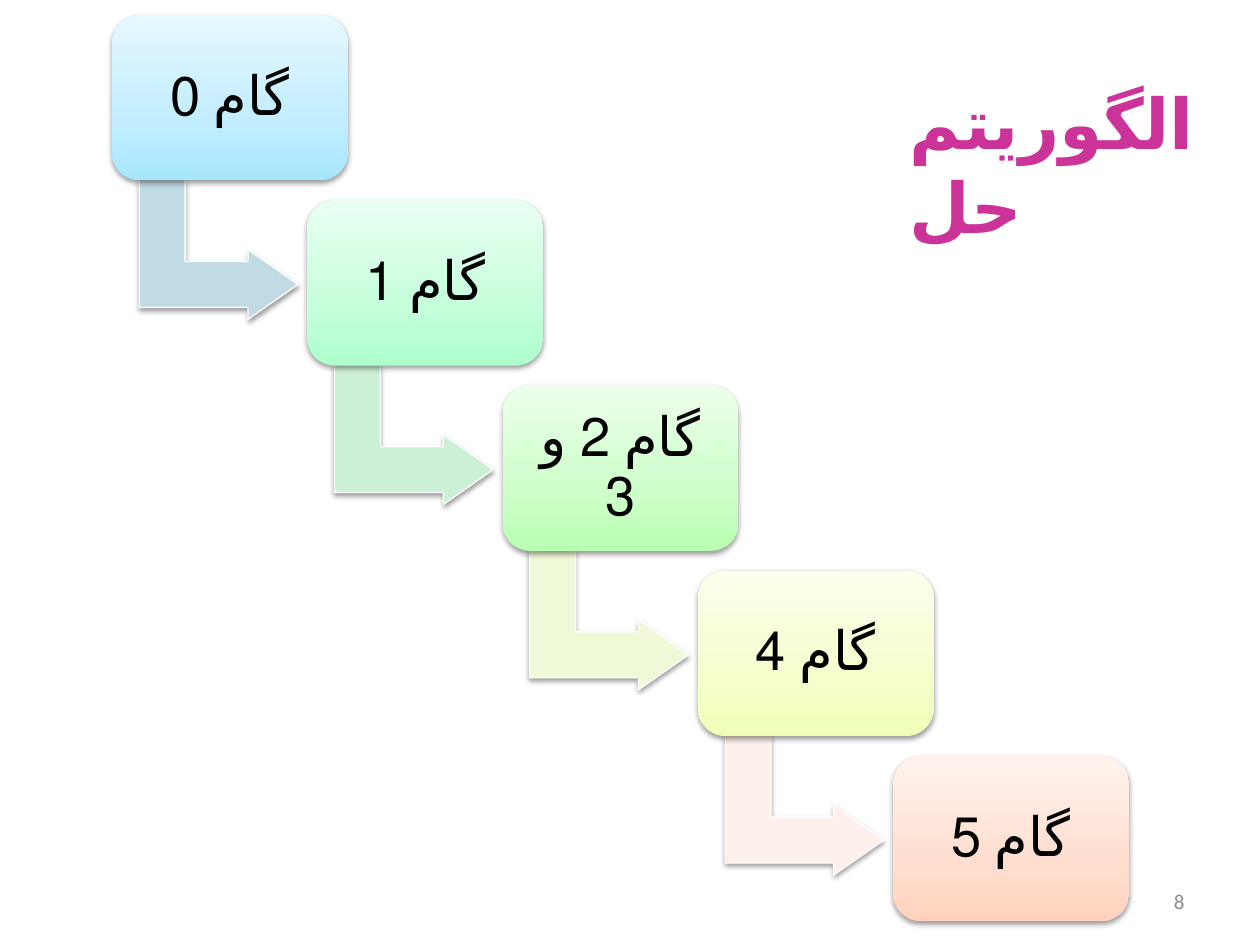
from copy import deepcopy

from lxml.etree import SubElement
from pptx import Presentation
from pptx.dml.color import RGBColor as Rgb
from pptx.enum.lang import MSO_LANGUAGE_ID as Language
from pptx.enum.shapes import MSO_SHAPE as Preset
from pptx.enum.text import MSO_ANCHOR as Anchor, PP_ALIGN as Align
from pptx.oxml.ns import qn
from pptx.util import Inches, Pt

BLACK = Rgb(0x00, 0x00, 0x00)
WHITE = Rgb(0xFF, 0xFF, 0xFF)
GREY = Rgb(0x8C, 0x8C, 0x8C)
MAGENTA = Rgb(0xCC, 0x33, 0x99)

# Box gradients, from the bottom edge up
BLUE = (Rgb(0xA7, 0xE6, 0xFF), Rgb(0xC1, 0xED, 0xFF), Rgb(0xE7, 0xF8, 0xFF))
MINT = (Rgb(0xAD, 0xFF, 0xCD), Rgb(0xC5, 0xFF, 0xDB), Rgb(0xE9, 0xFF, 0xF1))
GREEN = (Rgb(0xB9, 0xFF, 0xB2), Rgb(0xCD, 0xFF, 0xC9), Rgb(0xEC, 0xFF, 0xEA))
YELLOW = (Rgb(0xF0, 0xFF, 0xB8), Rgb(0xF4, 0xFF, 0xCD), Rgb(0xFB, 0xFF, 0xEC))
PEACH = (Rgb(0xFF, 0xD2, 0xBD), Rgb(0xFF, 0xDE, 0xD0), Rgb(0xFF, 0xF2, 0xED))
GRADIENT_POSITIONS = (0, 0.35, 1)

# Label, box gradient and colour of the arrow to the next step
STEPS = [
    ("گام 0", BLUE, Rgb(0xC1, 0xDB, 0xE5)),
    ("گام 1", MINT, Rgb(0xCB, 0xF0, 0xD6)),
    ("گام 2 و 3", GREEN, Rgb(0xEF, 0xF9, 0xD8)),
    ("گام 4", YELLOW, Rgb(0xFD, 0xEF, 0xE9)),
    ("گام 5", PEACH, None),
]

# Staircase, in percent of the slide's width and height
STEP_RIGHT, STEP_DOWN = 15.5, 19.6
BOX = (8.9, 1.6, 18.7, 17.5)
ARROW = (11.8, 18, 11.1, 16.8)


def write(frame, text, size, color, align=Align.LEFT, anchor=Anchor.TOP,
          bold=False, line_spacing=1.0, space_after=0, inset=None,
          language=Language.FARSI):
    frame.word_wrap = True
    frame.vertical_anchor = anchor
    if inset is not None:
        frame.margin_left = frame.margin_right = Inches(inset)
        frame.margin_top = frame.margin_bottom = Inches(inset)
    paragraph = frame.paragraphs[0]
    paragraph.alignment = align
    paragraph.line_spacing = line_spacing
    paragraph.space_after = Pt(space_after)
    run = paragraph.add_run()
    run.text = text
    run.font.name = "Calibri"
    run.font.size = Pt(size)
    run.font.bold = bold
    run.font.color.rgb = color
    run.font.language_id = language


class Staircase:
    def __init__(self, deck):
        self.width, self.height = deck.slide_width, deck.slide_height
        self.slide = deck.slides.add_slide(deck.slide_layouts[6])

    def place(self, area, step=0):
        """Turn percentages into lengths, moved along the staircase."""
        left, top, width, height = area
        left += step * STEP_RIGHT
        top += step * STEP_DOWN
        return (int(self.width * left / 100), int(self.height * top / 100),
                int(self.width * width / 100), int(self.height * height / 100))

    def shape(self, preset, area, step, adjustments):
        shape = self.slide.shapes.add_shape(preset, *self.place(area, step))
        for index, value in enumerate(adjustments):
            shape.adjustments[index] = value
        # Soft shadow straight below
        shape.shadow.inherit = False
        effects = shape._element.spPr.find(qn("a:effectLst"))
        shadow = SubElement(effects, qn("a:outerShdw"), blurRad=str(Pt(3.1)),
                            dist=str(Pt(1.6)), dir="5400000", rotWithShape="0")
        tint = SubElement(shadow, qn("a:srgbClr"), val=str(BLACK))
        SubElement(tint, qn("a:alpha"), val="38000")
        return shape

    def arrow(self, step, color):
        arrow = self.shape(Preset.BENT_UP_ARROW, ARROW, step, (0.328, 0.25, 0.358))
        arrow.rotation = 90
        arrow.fill.solid()
        arrow.fill.fore_color.rgb = color
        arrow.line.color.rgb = WHITE
        arrow.line.width = Pt(0.75)

    def box(self, step, label, colors):
        box = self.shape(Preset.ROUNDED_RECTANGLE, BOX, step, (0.167,))
        box.line.fill.background()
        box.fill.gradient()
        box.fill.gradient_angle = 90
        # The default gradient has two stops; a third is needed
        stops = box._element.spPr.find(qn("a:gradFill")).find(qn("a:gsLst"))
        stops.append(deepcopy(stops[-1]))
        for stop, color, position in zip(box.fill.gradient_stops, colors,
                                         GRADIENT_POSITIONS):
            stop.color.rgb = color
            stop.position = position
        write(box.text_frame, label, 31, BLACK, align=Align.CENTER,
              anchor=Anchor.MIDDLE, line_spacing=0.9, space_after=11, inset=0.13)

    def text(self, area, text, **style):
        holder = self.slide.shapes.add_textbox(*self.place(area))
        write(holder.text_frame, text, **style)


def main():
    deck = Presentation()
    deck.slide_width, deck.slide_height = Inches(10), Inches(7.5)
    stairs = Staircase(deck)

    # Slide number
    stairs.text((71.7, 92.67, 23.3, 5.33), "8", size=12, color=GREY,
                align=Align.RIGHT, anchor=Anchor.MIDDLE,
                language=Language.ENGLISH_US)

    # Steps, each arrow behind its box
    for step, (label, gradient, arrow_color) in enumerate(STEPS):
        if arrow_color is not None:
            stairs.arrow(step, arrow_color)
        stairs.box(step, label, gradient)

    # Title
    stairs.text((71.2, 7.73, 24.6, 10.27), "الگوریتم حل", size=40,
                color=MAGENTA, bold=True)

    deck.save("out.pptx")


if __name__ == "__main__":
    main()
